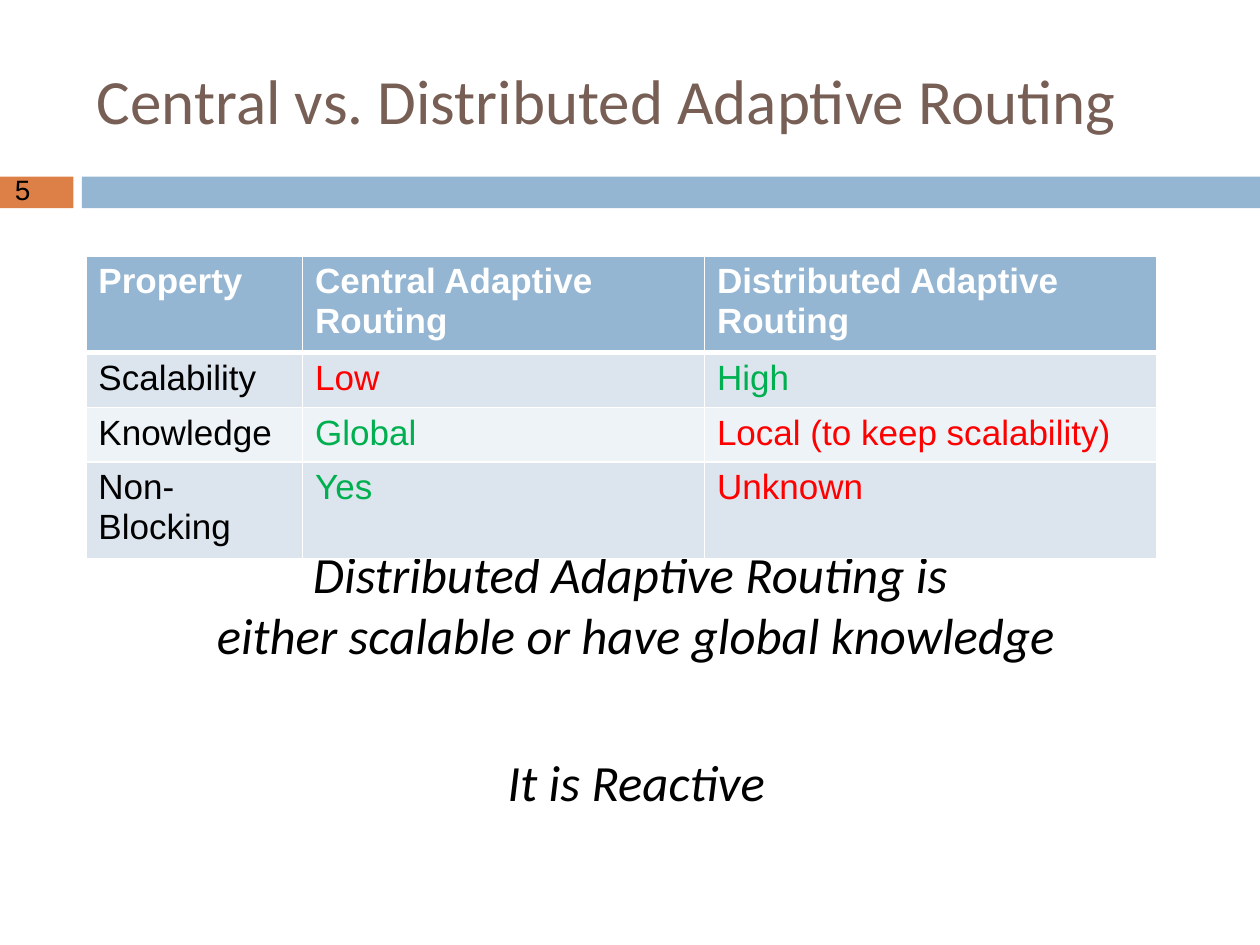
from lxml import etree
from pptx import Presentation
from pptx.dml.color import RGBColor
from pptx.enum import shapes, text
from pptx.oxml import ns
from pptx.util import Cm, Pt

ORANGE = RGBColor(0xDD, 0x80, 0x47)
BLUE = RGBColor(0x94, 0xB6, 0xD2)
BROWN = RGBColor(0x77, 0x5F, 0x55)
BAND_DARK = RGBColor(0xDC, 0xE5, 0xEE)
BAND_LIGHT = RGBColor(0xEE, 0xF3, 0xF7)
BLACK = RGBColor(0, 0, 0)
WHITE = RGBColor(0xFF, 0xFF, 0xFF)
RED = RGBColor(0xFF, 0, 0)
GREEN = RGBColor(0, 0xB0, 0x50)

COLUMN_WIDTHS = (Cm(4.37), Cm(8.1), Cm(9.12))
ROW_HEIGHT = Cm(1.04)
HEADER = ("Property", "Central Adaptive Routing", "Distributed Adaptive Routing")
ROWS = (
    (("Scalability", BLACK), ("Low", RED), ("High", GREEN)),
    (("Knowledge", BLACK), ("Global", GREEN), ("Local (to keep scalability)", RED)),
    (("Non-Blocking", BLACK), ("Yes", GREEN), ("Unknown", RED)),
)


def style_paragraph(paragraph, font_name, size, color, alignment=text.PP_ALIGN.LEFT):
    paragraph.alignment = alignment
    paragraph.font.name = font_name
    paragraph.font.size = Pt(size)
    paragraph.font.color.rgb = color


def add_bar(slide, left, width, color):
    shape = slide.shapes.add_shape(
        shapes.MSO_SHAPE.RECTANGLE, left, Cm(3.56), width, Cm(0.64))
    shape.shadow.inherit = False
    shape.fill.solid()
    shape.fill.fore_color.rgb = color
    shape.line.fill.background()


def add_text_box(slide, left, top, width, height):
    frame = slide.shapes.add_textbox(left, top, width, height).text_frame
    frame.word_wrap = True
    return frame


def add_slide_number(slide, number):
    frame = add_text_box(slide, Cm(0.05), Cm(3.35), Cm(1.22), Cm(0.94))
    frame.text = number
    style_paragraph(frame.paragraphs[0], "Arial", 16, BLACK)


def set_title(slide, wording):
    title = slide.shapes.title
    title.left, title.top, title.width, title.height = Cm(1.7), Cm(0.64), Cm(22.66), Cm(2.74)
    title.text_frame.text = wording
    title.text_frame.vertical_anchor = text.MSO_ANCHOR.MIDDLE
    style_paragraph(title.text_frame.paragraphs[0], "Calibri", 36, BROWN)


def add_conclusions(slide):
    frame = add_text_box(slide, Cm(1.5), Cm(10.82), Cm(22.66), Cm(6.76))
    frame.text = ("Distributed Adaptive Routing is \v"
                  "either scalable or have global knowledge\nIt is Reactive")
    for paragraph, space_before in zip(frame.paragraphs, (7, 49)):
        style_paragraph(paragraph, "Calibri", 29, BLACK, text.PP_ALIGN.CENTER)
        paragraph.font.italic = True
        paragraph.space_before = Pt(space_before)


def set_borders(cell, bottom_width):
    properties = cell._tc.get_or_add_tcPr()
    for side, width in (("L", 1), ("R", 1), ("T", 1), ("B", bottom_width)):
        line = etree.SubElement(properties, ns.qn(f"a:ln{side}"), w=str(Pt(width)))
        fill = etree.SubElement(line, ns.qn("a:solidFill"))
        etree.SubElement(fill, ns.qn("a:srgbClr"), val=str(WHITE))


def fill_cell(cell, wording, color, background, header=False):
    set_borders(cell, 3 if header else 1)
    cell.fill.solid()
    cell.fill.fore_color.rgb = background
    cell.text = wording
    paragraph = cell.text_frame.paragraphs[0]
    style_paragraph(paragraph, "Arial", 20, color)
    paragraph.font.bold = header


def add_comparison(slide):
    row_count = len(ROWS) + 1
    table = slide.shapes.add_table(
        row_count, len(HEADER), Cm(1.73), Cm(5.16),
        sum(COLUMN_WIDTHS), ROW_HEIGHT * row_count).table
    for column, width in zip(table.columns, COLUMN_WIDTHS):
        column.width = width
    for row in table.rows:
        row.height = ROW_HEIGHT
    for column, wording in enumerate(HEADER):
        fill_cell(table.cell(0, column), wording, WHITE, BLUE, header=True)
    for row, entries in enumerate(ROWS, start=1):
        background = BAND_DARK if row % 2 else BAND_LIGHT
        for column, (wording, color) in enumerate(entries):
            fill_cell(table.cell(row, column), wording, color, background)


def main():
    presentation = Presentation()
    presentation.slide_width, presentation.slide_height = Cm(25.4), Cm(19.05)
    slide = presentation.slides.add_slide(presentation.slide_layouts[5])
    add_bar(slide, 0, Cm(1.48), ORANGE)
    add_bar(slide, Cm(1.65), Cm(23.75), BLUE)
    add_slide_number(slide, "5")
    set_title(slide, "Central vs. Distributed Adaptive Routing")
    add_conclusions(slide)
    add_comparison(slide)
    presentation.save("out.pptx")


if __name__ == "__main__":
    main()
